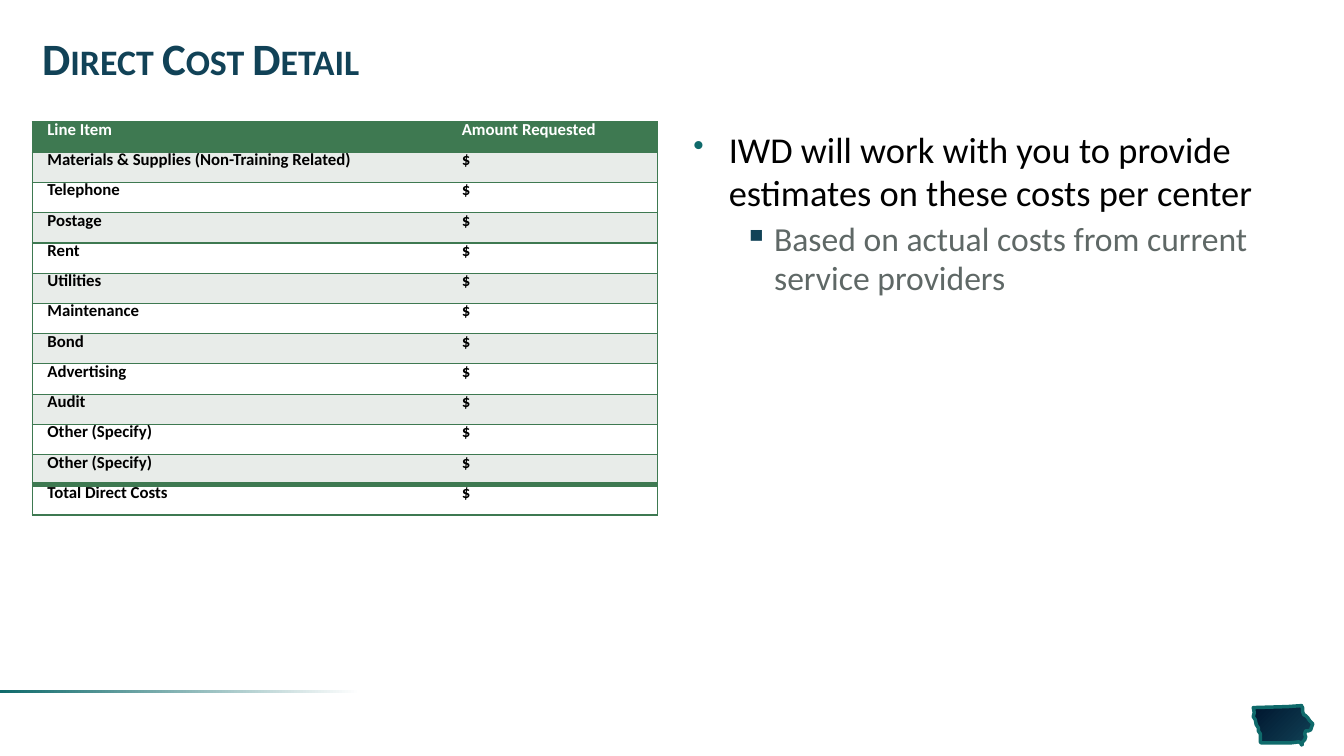
from dataclasses import dataclass

from lxml.etree import SubElement
from pptx import Presentation
from pptx.dml.color import RGBColor
from pptx.dml.fill import FillFormat
from pptx.enum.shapes import MSO_SHAPE
from pptx.enum.text import MSO_ANCHOR
from pptx.oxml.ns import qn
from pptx.slide import Slide
from pptx.table import _Cell
from pptx.text.text import TextFrame, _Paragraph
from pptx.util import Inches, Pt

FONT = "Calibri"
NAVY = RGBColor(0x11, 0x42, 0x57)
MIDNIGHT = RGBColor(0x00, 0x16, 0x2E)
TEAL = RGBColor(0x0F, 0x6A, 0x6B)
GREEN = RGBColor(0x3E, 0x79, 0x51)
PALE = RGBColor(0xE8, 0xEC, 0xE9)
GRAY = RGBColor(0x5F, 0x68, 0x66)
WHITE = RGBColor(0xFF, 0xFF, 0xFF)
BLACK = RGBColor(0x00, 0x00, 0x00)

COST_ITEMS = [
    "Materials & Supplies (Non-Training Related)", "Telephone", "Postage", "Rent",
    "Utilities", "Maintenance", "Bond", "Advertising", "Audit",
    "Other (Specify)", "Other (Specify)", "Total Direct Costs",
]
COST_ROWS = [("Line Item", "Amount Requested")] + [(item, "$") for item in COST_ITEMS]
COLUMN_WIDTHS = (4.11, 2.09)
ROW_HEIGHT = 0.3

STATE_OUTLINE = [
    (1291, 700), (1277, 701), (1243, 702), (1244, 707), (1243, 711), (1245, 714),
    (1246, 719), (1248, 722), (1248, 725), (1250, 728), (1250, 736), (1251, 737),
    (1280, 737), (1288, 736), (1290, 737), (1291, 739), (1292, 738), (1291, 737),
    (1294, 734), (1295, 731), (1294, 728), (1295, 725), (1298, 725), (1300, 724),
    (1301, 721), (1302, 718), (1299, 715), (1297, 712), (1295, 710), (1293, 709),
    (1292, 706), (1292, 702), (1291, 701),
]


@dataclass(frozen=True)
class Point:
    text: str
    level: int
    size: int
    color: RGBColor
    bullet: str
    bullet_color: RGBColor
    bullet_percent: int
    margin: float
    indent: float
    line_spacing: float
    space_before: int


POINTS = [
    Point("IWD will work with you to provide estimates on these costs per center",
          0, 26, BLACK, "•", TEAL, 85, 0.35, -0.35, 1.0, 0),
    Point("Based on actual costs from current service providers",
          1, 24, GRAY, "▪", NAVY, 100, 0.8, -0.3, 0.95, 5),
]


def style_font(paragraph: _Paragraph, size: int, color: RGBColor, bold: bool = False) -> None:
    font = paragraph.font
    font.name, font.size, font.bold = FONT, Pt(size), bold
    font.color.rgb = color


def set_gradient(fill: FillFormat, angle: int, stops: list[tuple[float, RGBColor]]) -> None:
    fill.gradient()
    fill.gradient_angle = angle
    for stop, (position, color) in zip(fill.gradient_stops, stops):
        stop.position = position
        stop.color.rgb = color


def add_text_frame(slide: Slide, left: float, top: float, width: float, height: float) -> TextFrame:
    frame = slide.shapes.add_textbox(
        Inches(left), Inches(top), Inches(width), Inches(height)).text_frame
    frame.word_wrap = True
    return frame


def add_state(slide: Slide) -> None:
    start, *rest = STATE_OUTLINE
    builder = slide.shapes.build_freeform(*start, scale=Inches(0.01))
    builder.add_line_segments(rest, close=True)
    state = builder.convert_to_shape()
    state.shadow.inherit = False
    set_gradient(state.fill, 315, [(0, MIDNIGHT), (1, NAVY)])
    state.line.color.rgb = TEAL
    state.line.width = Pt(2.5)


def add_footer_rule(slide: Slide) -> None:
    rule = slide.shapes.add_shape(
        MSO_SHAPE.RECTANGLE, 0, Inches(6.85), Inches(3.8), Inches(0.03))
    rule.shadow.inherit = False
    rule.line.fill.background()
    set_gradient(rule.fill, 180, [(0.06, WHITE), (1, TEAL)])


def add_title(slide: Slide) -> None:
    frame = add_text_frame(slide, 0.32, 0.24, 12.69, 0.75)
    frame.vertical_anchor = MSO_ANCHOR.MIDDLE
    title = frame.paragraphs[0]
    title.text = "Direct Cost Detail"
    title.line_spacing = 0.85
    style_font(title, 32, NAVY, bold=True)
    title._p.pPr.find(qn("a:defRPr")).set("cap", "small")


def set_borders(cell: _Cell, widths: dict[str, int]) -> None:
    properties = cell._tc.get_or_add_tcPr()
    for position, (side, width) in enumerate(widths.items()):
        border = SubElement(properties, qn(f"a:ln{side}"), w=str(Pt(width)))
        if width:
            solid = SubElement(border, qn("a:solidFill"))
            SubElement(solid, qn("a:srgbClr"), val=str(GREEN))
        else:
            SubElement(border, qn("a:noFill"))
        properties.insert(position, border)


def add_cost_table(slide: Slide) -> None:
    last = len(COST_ROWS) - 1
    table = slide.shapes.add_table(
        len(COST_ROWS), len(COLUMN_WIDTHS), Inches(0.32), Inches(1.21),
        Inches(sum(COLUMN_WIDTHS)), Inches(ROW_HEIGHT * len(COST_ROWS))).table
    table.horz_banding = False
    for column, width in zip(table.columns, COLUMN_WIDTHS):
        column.width = Inches(width)
    for row_index, labels in enumerate(COST_ROWS):
        table.rows[row_index].height = Inches(ROW_HEIGHT)
        header = row_index == 0
        band = GREEN if header else PALE if row_index % 2 else WHITE
        for column_index, label in enumerate(labels):
            cell = table.cell(row_index, column_index)
            cell.margin_left = Inches(0.15)
            cell.margin_right = Inches(0.08)
            cell.margin_top = cell.margin_bottom = 0
            cell.fill.solid()
            cell.fill.fore_color.rgb = band
            set_borders(cell, {
                "L": 1 - column_index,
                "R": column_index,
                "T": 4 if row_index == last else 1,
                "B": 4 if row_index == last - 1 else 1,
            })
            paragraph = cell.text_frame.paragraphs[0]
            paragraph.text = label
            paragraph.line_spacing = Pt(12.9)
            style_font(paragraph, 12, WHITE if header else BLACK, bold=True)


def add_points(slide: Slide) -> None:
    frame = add_text_frame(slide, 6.78, 1.21, 6.2, 5.55)
    for index, point in enumerate(POINTS):
        paragraph = frame.add_paragraph() if index else frame.paragraphs[0]
        paragraph.text = point.text
        paragraph.level = point.level
        properties = paragraph._p.get_or_add_pPr()
        properties.set("marL", str(Inches(point.margin)))
        properties.set("indent", str(Inches(point.indent)))
        bullet_color = SubElement(properties, qn("a:buClr"))
        SubElement(bullet_color, qn("a:srgbClr"), val=str(point.bullet_color))
        SubElement(properties, qn("a:buSzPct"), val=str(point.bullet_percent * 1000))
        SubElement(properties, qn("a:buChar"), char=point.bullet)
        paragraph.line_spacing = point.line_spacing
        if point.space_before:
            paragraph.space_before = Pt(point.space_before)
        style_font(paragraph, point.size, point.color)


def main() -> None:
    presentation = Presentation()
    presentation.slide_width = Inches(13.33)
    presentation.slide_height = Inches(7.5)
    slide = presentation.slides.add_slide(presentation.slide_layouts[6])
    add_state(slide)
    add_footer_rule(slide)
    add_title(slide)
    add_cost_table(slide)
    add_points(slide)
    presentation.save("out.pptx")


if __name__ == "__main__":
    main()
